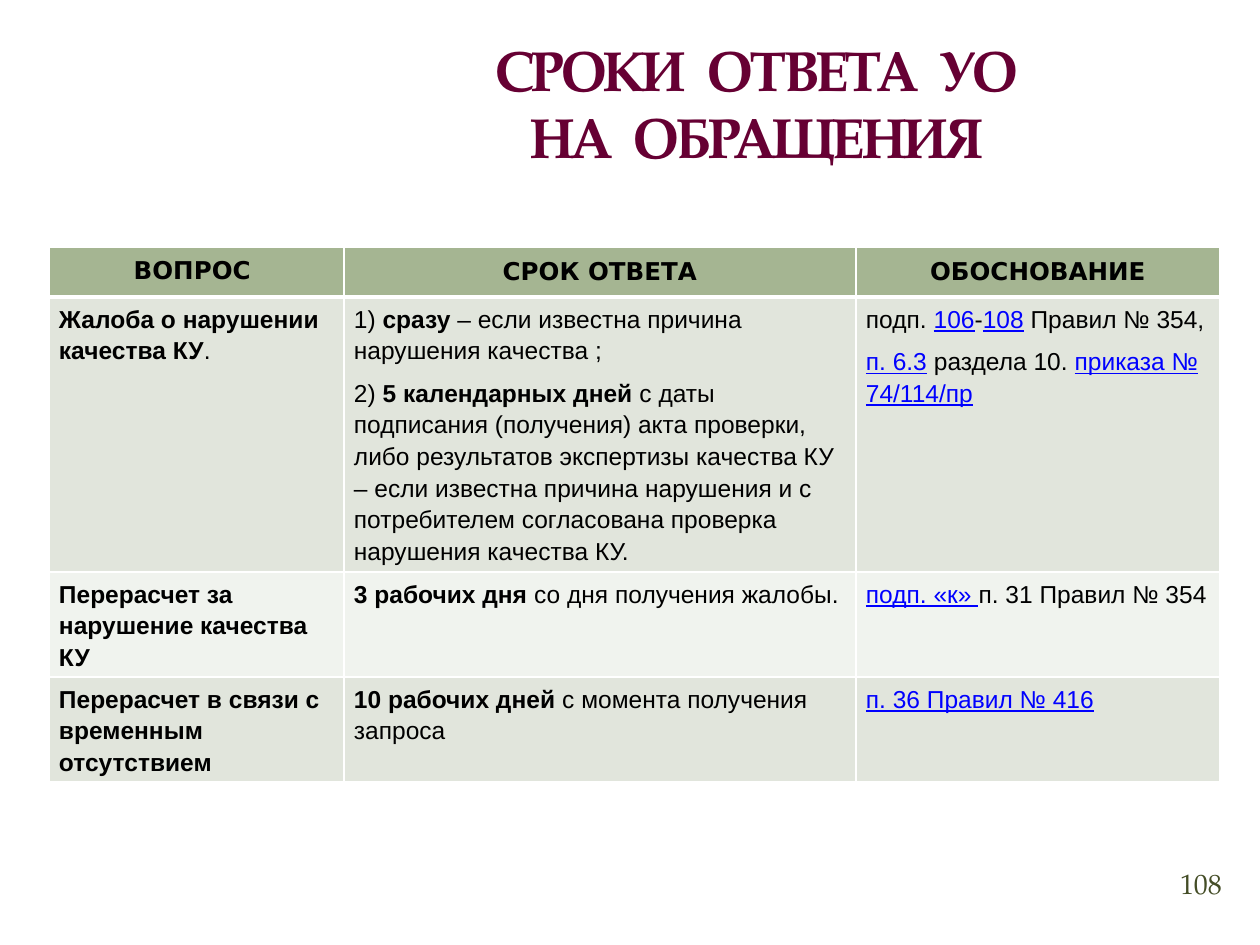
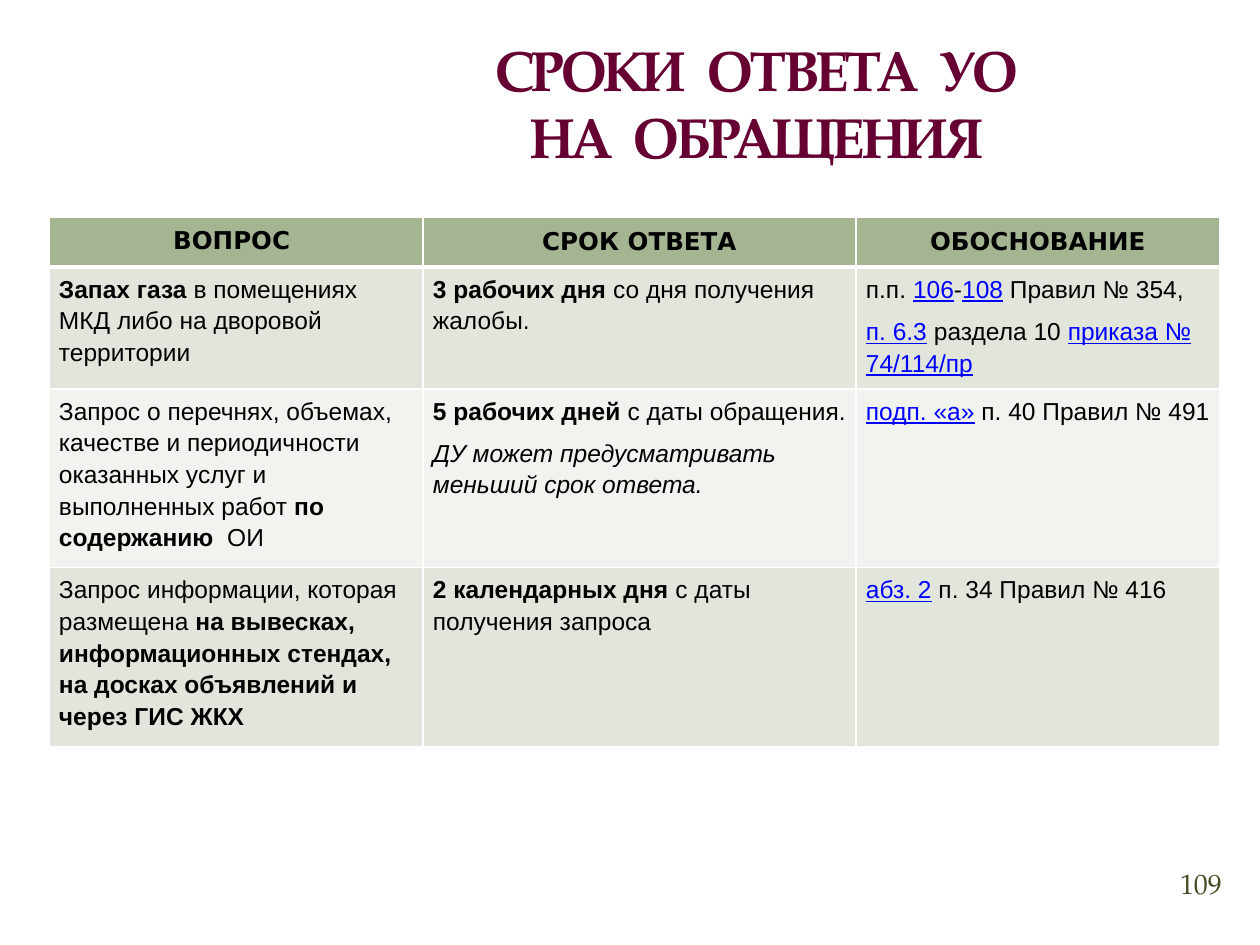
from dataclasses import dataclass

from pptx import Presentation
from pptx import util as u
from pptx.dml.color import RGBColor
from pptx.enum import text
from pptx.oxml import parse_xml
from pptx.oxml.ns import nsdecls

TITLE = ["СРОКИ  ОТВЕТА  УО", "НА  ОБРАЩЕНИЯ"]
HEADINGS = ["ВОПРОС ", "СРОК ОТВЕТА", "ОБОСНОВАНИЕ"]

# A cell is a list of paragraphs, a paragraph a list of (words, style) runs.
PLAIN, BOLD, ITALIC, LINK = "plain", "bold", "italic", "link"

SLIDES = [
    {
        "page": "108", "top": 247,
        "columns": [295, 512, 364], "rows": [50, 275, 105, 104],
        "answers": [
            [
                [[("Жалоба о нарушении качества КУ", BOLD), (".", PLAIN)]],
                [
                    [("1) ", PLAIN), ("сразу ", BOLD),
                     ("– если известна причина нарушения качества ;", PLAIN)],
                    [("2) ", PLAIN), ("5 календарных дней ", BOLD),
                     ("с даты подписания (получения) акта проверки, либо "
                      "результатов экспертизы качества КУ – если известна "
                      "причина нарушения и с потребителем согласована "
                      "проверка нарушения качества КУ.", PLAIN)],
                ],
                [
                    [("подп. ", PLAIN), ("106", LINK), ("-", PLAIN),
                     ("108", LINK), (" Правил № 354,", PLAIN)],
                    [("п. 6.3", LINK), (" раздела 10. ", PLAIN),
                     ("приказа № 74/114/пр", LINK)],
                ],
            ],
            [
                [[("Перерасчет за нарушение качества КУ", BOLD)]],
                [[("3 рабочих дня ", BOLD), ("со дня получения жалобы.", PLAIN)]],
                [[("подп. «к» ", LINK), ("п. 31 Правил № 354", PLAIN)]],
            ],
            [
                [[("Перерасчет в связи с временным отсутствием", BOLD)]],
                [[("10 рабочих дней ", BOLD), ("с момента получения запроса", PLAIN)]],
                [[("п. 36 Правил № 416", LINK)]],
            ],
        ],
    },
    {
        "page": "109", "top": 217,
        "columns": [374, 433, 364], "rows": [50, 116, 169, 168],
        "answers": [
            [
                [[("Запах газа", BOLD),
                  (" в помещениях МКД либо на дворовой территории", PLAIN)]],
                [[("3 рабочих дня ", BOLD), ("со дня получения жалобы.", PLAIN)]],
                [
                    [("п.п. ", PLAIN), ("106", LINK), ("-", PLAIN),
                     ("108", LINK), (" Правил № 354,", PLAIN)],
                    [("п. 6.3", LINK), (" раздела 10 ", PLAIN),
                     ("приказа № 74/114/пр", LINK)],
                ],
            ],
            [
                [[("Запрос о перечнях, объемах, качестве и периодичности "
                   "оказанных услуг и выполненных работ ", PLAIN),
                  ("по содержанию", BOLD), ("  ОИ", PLAIN)]],
                [
                    [("5 рабочих дней ", BOLD), ("с даты обращения.", PLAIN)],
                    [("ДУ может предусматривать меньший срок ответа.", ITALIC)],
                ],
                [[("подп. «а»", LINK), (" п. 40 Правил № 491", PLAIN)]],
            ],
            [
                [[("Запрос информации, которая размещена ", PLAIN),
                  ("на вывесках, информационных стендах, на досках "
                   "объявлений и через ГИС ЖКХ", BOLD)]],
                [[("2 календарных дня ", BOLD), ("с даты получения запроса", PLAIN)]],
                [[("абз. 2", LINK), (" п. 34 Правил № 416", PLAIN)]],
            ],
        ],
    },
]


@dataclass(frozen=True)
class Theme:
    title: str = "660033"
    page: str = "444D26"
    ink: str = "000000"
    link: str = "0000FF"
    border: str = "FFFFFF"
    heading_fill: str = "A5B592"
    bands: tuple = ("E1E5DC", "F0F3EE")
    serif: str = "TeX Gyre Pagella"
    heading_font: str = "DejaVu Sans"
    body_font: str = "Arial"
    title_size: int = 32
    page_size: int = 16
    table_size: int = 14


THEME = Theme()
TABLE_LEFT = 49
TITLE_BOX = (315, 29, 882, 147)
PAGE_BOX = (1159, 852, 84, 63)


def px(length):
    return u.Emu(round(length * 914400 / 126))


def add_run(paragraph, words, face, size, color, style=PLAIN):
    run = paragraph.add_run()
    run.text = words
    font = run.font
    font.name, font.size = face, u.Pt(size)
    font.color.rgb = RGBColor.from_string(color)
    font.bold, font.italic = style == BOLD, style == ITALIC
    font.underline = style == LINK
    return run


def add_centred_box(slide, box, anchor):
    frame = slide.shapes.add_textbox(*map(px, box)).text_frame
    frame.word_wrap, frame.vertical_anchor = True, anchor
    frame.paragraphs[0].alignment = text.PP_ALIGN.CENTER
    return frame


def add_title(slide):
    heading = add_centred_box(slide, TITLE_BOX, text.MSO_ANCHOR.BOTTOM).paragraphs[0]
    for number, line in enumerate(TITLE):
        if number:
            heading.add_line_break()
        run = add_run(heading, line, THEME.serif, THEME.title_size, THEME.title, BOLD)
        run.font._element.set("spc", "-100")


def add_page_number(slide, page):
    frame = add_centred_box(slide, PAGE_BOX, text.MSO_ANCHOR.MIDDLE)
    frame.margin_left = frame.margin_right = frame.margin_top = frame.margin_bottom = 0
    add_run(frame.paragraphs[0], page, THEME.serif, THEME.page_size, THEME.page)


def dress_cell(cell, fill, margins, top=1, bottom=1):
    """Set fill, (side, end) margins in px and border widths in points."""
    cell.margin_left = cell.margin_right = px(margins[0])
    cell.margin_top = cell.margin_bottom = px(margins[1])
    cell.fill.solid()
    cell.fill.fore_color.rgb = RGBColor.from_string(fill)
    properties = cell._tc.get_or_add_tcPr()
    for place, (side, width) in enumerate(zip("LRTB", (1, 1, top, bottom))):
        properties.insert(place, parse_xml(
            f'<a:ln{side} {nsdecls("a")} w="{u.Pt(width)}"><a:solidFill>'
            f'<a:srgbClr val="{THEME.border}"/></a:solidFill></a:ln{side}>'))


def write_cell(cell, paragraphs, face, alignment):
    frame = cell.text_frame
    for number, runs in enumerate(paragraphs):
        paragraph = frame.add_paragraph() if number else frame.paragraphs[0]
        paragraph.alignment = alignment
        paragraph.line_spacing, paragraph.space_after = 1.15, u.Pt(6)
        for words, style in runs:
            color = THEME.link if style == LINK else THEME.ink
            add_run(paragraph, words, face, THEME.table_size, color, style)


def add_deadlines(slide, content):
    columns, rows = content["columns"], content["rows"]
    deadlines = slide.shapes.add_table(
        len(rows), len(columns), px(TABLE_LEFT), px(content["top"]),
        px(sum(columns)), px(sum(rows))).table
    deadlines.first_row = deadlines.horz_banding = False
    for column, width in zip(deadlines.columns, columns):
        column.width = px(width)
    for row, height in zip(deadlines.rows, rows):
        row.height = px(height)

    for c, heading in enumerate(HEADINGS):
        cell = deadlines.cell(0, c)
        dress_cell(cell, THEME.heading_fill, (6, 6) if c else (10, 5), bottom=3)
        write_cell(cell, [[(heading, BOLD)]], THEME.heading_font, text.PP_ALIGN.CENTER)
    for r, answer in enumerate(content["answers"], 1):
        for c, paragraphs in enumerate(answer):
            cell = deadlines.cell(r, c)
            dress_cell(cell, THEME.bands[(r - 1) % 2], (10, 5), top=3 if r == 1 else 1)
            write_cell(cell, paragraphs, THEME.body_font, text.PP_ALIGN.LEFT)


def main():
    deck = Presentation()
    deck.slide_width, deck.slide_height = px(1260), px(945)
    for content in SLIDES:
        slide = deck.slides.add_slide(deck.slide_layouts[6])
        add_deadlines(slide, content)
        add_page_number(slide, content["page"])
        add_title(slide)
    deck.save("out.pptx")


if __name__ == "__main__":
    main()
